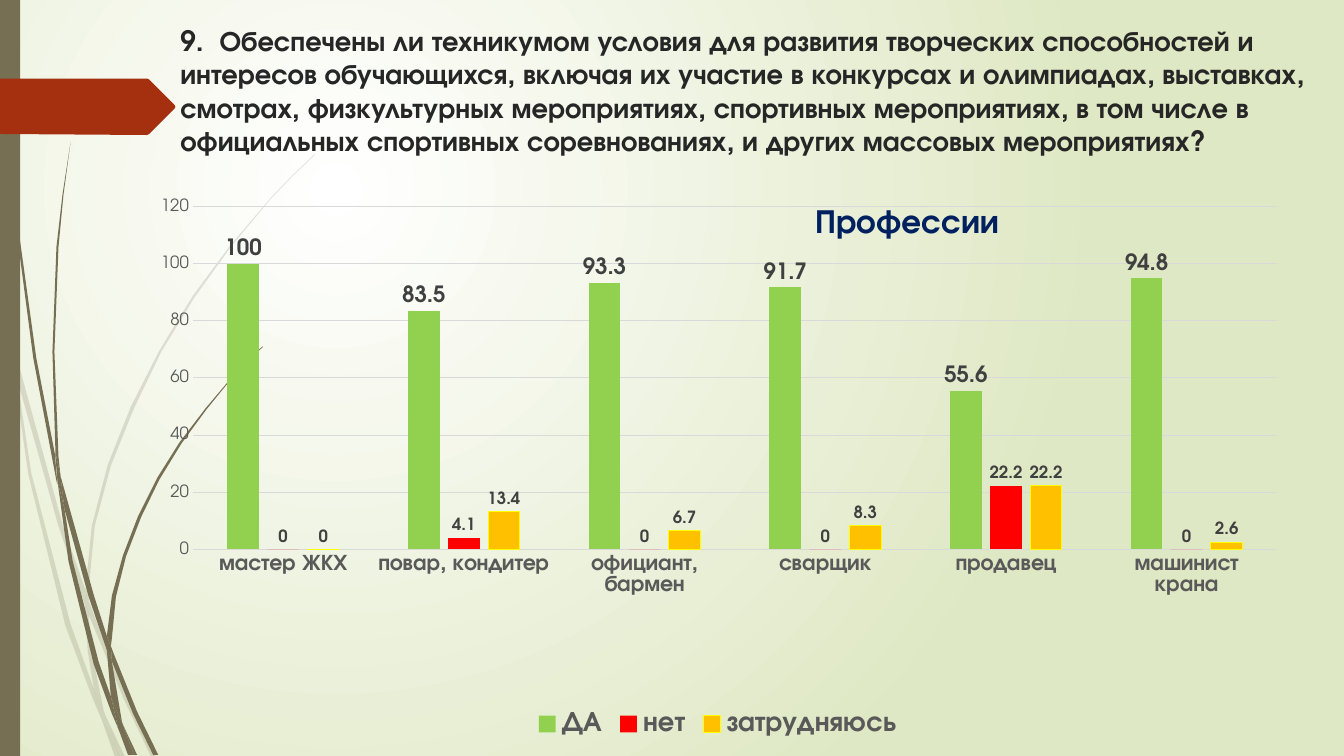
from pptx import Presentation
from pptx.chart.data import CategoryChartData
from pptx.dml.color import RGBColor
from pptx.enum.chart import XL_CHART_TYPE, XL_LABEL_POSITION, XL_LEGEND_POSITION, XL_TICK_MARK
from pptx.enum.shapes import MSO_SHAPE
from pptx.oxml import parse_xml
from pptx.oxml.ns import nsdecls, qn
from pptx.util import Inches, Pt

WHITE = RGBColor(0xFF, 0xFF, 0xFF)
LIME = RGBColor(0xDF, 0xE8, 0xC4)
OLIVE = RGBColor(0x76, 0x6F, 0x54)
RUST = RGBColor(0xA5, 0x30, 0x10)
INK = RGBColor(0x26, 0x26, 0x26)
NAVY = RGBColor(0x00, 0x20, 0x60)
GREY = RGBColor(0x59, 0x59, 0x59)
DARK = RGBColor(0x40, 0x40, 0x40)
RULE = RGBColor(0xD9, 0xD9, 0xD9)
GREEN = RGBColor(0x92, 0xD0, 0x50)
RED = RGBColor(0xFF, 0x00, 0x00)
GOLD = RGBColor(0xFF, 0xC0, 0x00)
YELLOW = RGBColor(0xFF, 0xFF, 0x00)

PALE_BLADES = [
    [(.11, 3.5), (.09, 3.22), (0, 2.82), (0, 2.99), (.1, 3.44)],
    [(.58, 5.22), (.84, 5.99), (.85, 5.86), (.62, 5.2), (.14, 3.45), (.17, 3.76)],
    [(.92, 6.07), (.88, 5.96), (.88, 6.1), (1.23, 6.94), (1.5, 7.51), (1.55, 7.51), (1.27, 6.92)],
    [(1.19, 7.51), (1.24, 7.51), (1.05, 7.11)],
    [(.93, 6.83), (.7, 6.19), (.31, 4.69), (.17, 3.76), (.11, 3.5), (.28, 4.7), (.65, 6.21),
     (.92, 6.93), (1.01, 7.14), (.99, 7.07)],
    [(.84, 5.99), (.87, 6.46), (.93, 6.83), (.96, 6.92), (1.05, 7.11), (1.03, 7.06), (.91, 6.46),
     (.88, 6.1), (.88, 6.08)],
    [(.88, 5.84), (.94, 5.22), (1.1, 4.62), (1.33, 4.05), (1.6, 3.49), (1.93, 2.95), (2.29, 2.45),
     (2.68, 1.98), (2.9, 1.75), (3.12, 1.54), (3.12, 1.53), (2.89, 1.75), (2.68, 1.97),
     (2.28, 2.44), (1.91, 2.94), (1.58, 3.48), (1.3, 4.03), (1.07, 4.61), (.91, 5.22),
     (.85, 5.84), (.85, 5.86), (.88, 5.96)],
    [(1.01, 7.14), (1.14, 7.51), (1.19, 7.51)],
    [(.88, 6.08), (.88, 6.1), (.88, 5.96), (.85, 5.86), (.84, 5.99)],
    [(.96, 6.92), (.93, 6.83), (.99, 7.07), (1.01, 7.14), (1.19, 7.51), (1.05, 7.11)],
]
DARK_BLADES = [
    [(.07, 1.1), (.17, 2.33), (.33, 3.55), (.56, 4.77), (.57, 4.81), (.55, 4.57), (.55, 4.53),
     (.36, 3.55), (.19, 2.32), (.08, 1.09), (.05, .48), (.04, 0), (.03, 0), (.04, .48)],
    [(.88, 5.92), (1.06, 6.45), (1.06, 6.33), (1.06, 6.31), (.93, 5.9), (.6, 4.72), (.64, 5.05)],
    [(1.13, 6.49), (1.1, 6.41), (1.11, 6.56), (1.32, 7.08), (1.52, 7.49), (1.57, 7.49),
     (1.36, 7.06)],
    [(1.1, 6.91), (.98, 6.57), (.72, 5.56), (.64, 5.05), (.57, 4.77), (.68, 5.57), (.93, 6.59),
     (1.11, 7.08), (1.17, 7.22), (1.16, 7.17)],
    [(.6, 4.72), (.58, 4.53), (.54, 3.49), (.58, 2.45), (.63, 1.93), (.7, 1.41), (.62, 1.93),
     (.56, 2.45), (.52, 3.49), (.55, 4.49)],
    [(1.33, 7.49), (1.36, 7.49), (1.22, 7.19)],
    [(.57, 4.77), (.64, 5.05), (.6, 4.72), (.55, 4.49), (.55, 4.53)],
    [(1.11, 6.33), (1.15, 5.92), (1.25, 5.52), (1.4, 5.13), (1.58, 4.76), (1.8, 4.4),
     (2.05, 4.06), (2.31, 3.74), (2.45, 3.59), (2.61, 3.44), (2.6, 3.44), (2.45, 3.58),
     (2.31, 3.73), (2.04, 4.05), (1.78, 4.39), (1.56, 4.74), (1.37, 5.12), (1.22, 5.51),
     (1.11, 5.91), (1.06, 6.31), (1.1, 6.41)],
    [(1.17, 7.22), (1.27, 7.49), (1.31, 7.49)],
    [(1.06, 6.45), (1.1, 6.91), (1.16, 7.06), (1.22, 7.19), (1.21, 7.16), (1.11, 6.56),
     (1.09, 6.51)],
    [(1.06, 6.45), (1.09, 6.51), (1.11, 6.56), (1.1, 6.41), (1.06, 6.31), (1.06, 6.33)],
    [(1.16, 7.06), (1.1, 6.91), (1.16, 7.17), (1.17, 7.22), (1.3, 7.49), (1.33, 7.49),
     (1.22, 7.19)],
]
ARROW = [(0, .78), (1.46, .78), (1.48, .79), (1.73, 1.04), (1.74, 1.06), (1.73, 1.08),
         (1.48, 1.33), (1.46, 1.34), (0, 1.33)]

TITLE = ("9.  Обеспечены ли техникумом условия для развития творческих способностей и интересов "
         "обучающихся, включая их участие в конкурсах и олимпиадах, выставках, смотрах, "
         "физкультурных мероприятиях, спортивных мероприятиях, в том числе в официальных "
         "спортивных соревнованиях, и других массовых мероприятиях?")
JOBS = ["мастер ЖКХ", "повар, кондитер", "официант, бармен", "сварщик", "продавец",
        "машинист крана"]
SERIES = [
    ("ДА", [100, 83.5, 93.3, 91.7, 55.6, 94.8], GREEN, None, 16),
    ("нет", [0, 4.1, 0, 0, 22.2, 0], RED, None, 12),
    ("затрудняюсь", [0, 13.4, 6.7, 8.3, 22.2, 2.6], GOLD, YELLOW, 12),
]


class Deck:
    face = "TeX Gyre Adventor"

    def __init__(self):
        self.show = Presentation()
        self.show.slide_width, self.show.slide_height = Inches(13.33), Inches(7.5)
        self.slide = self.show.slides.add_slide(self.show.slide_layouts[6])

    def style(self, font, size, color, bold=True):
        font.name, font.size, font.bold = self.face, Pt(size), bold
        font.color.rgb = color

    def paint(self, shape, color):
        shape.shadow.inherit = False
        shape.fill.solid()
        shape.fill.fore_color.rgb = color
        shape.line.fill.background()

    def backdrop(self, inner, outer):
        fill = self.slide.background.fill
        fill.gradient()
        for stop, color in zip(fill.gradient_stops, (inner, outer)):
            stop.color.rgb = color
        grad = self.slide.element.find(".//" + qn("a:gradFill"))
        grad.remove(grad.find(qn("a:lin")))
        grad.append(parse_xml(
            f'<a:path {nsdecls("a")} path="circle">'
            '<a:fillToRect l="50000" t="50000" r="100000" b="100000"/></a:path>'))

    def outline(self, points, color, alpha=None):
        spots = [(Inches(x), Inches(y)) for x, y in points]
        pen = self.slide.shapes.build_freeform(*spots[0])
        pen.add_line_segments(spots[1:], close=True)
        shape = pen.convert_to_shape()
        self.paint(shape, color)
        if alpha:
            tint = shape.element.spPr.find(qn("a:solidFill"))[0]
            tint.append(parse_xml(f'<a:alpha {nsdecls("a")} val="{alpha * 1000}"/>'))

    def block(self, x, y, w, h, color):
        box = map(Inches, (x, y, w, h))
        self.paint(self.slide.shapes.add_shape(MSO_SHAPE.RECTANGLE, *box), color)

    def text(self, x, y, w, h, words, size, color):
        frame = self.slide.shapes.add_textbox(*map(Inches, (x, y, w, h))).text_frame
        frame.word_wrap = True
        frame.text = words
        self.style(frame.paragraphs[0].runs[0].font, size, color)

    def place(self, host, index, **spots):
        for old in host.findall(qn("c:layout")):
            host.remove(old)
        parts = "".join(f'<c:{tag} val="{val}"/>' for tag, val in spots.items())
        host.insert(index, parse_xml(
            f'<c:layout {nsdecls("c")}><c:manualLayout>{parts}</c:manualLayout></c:layout>'))

    def chart(self, x, y, w, h, title, cats, series):
        data = CategoryChartData()
        data.categories = cats
        for name, vals, *_ in series:
            data.add_series(name, vals)
        chart = self.slide.shapes.add_chart(
            XL_CHART_TYPE.COLUMN_CLUSTERED, *map(Inches, (x, y, w, h)), data).chart
        chart.font.name, chart.font.size = self.face, Pt(10)
        self.legend(chart)
        self.axes(chart)
        self.bars(chart.plots[0], series)
        frame = chart.chart_title.text_frame
        frame.text = title
        self.style(frame.paragraphs[0].runs[0].font, 24, NAVY)
        head = chart.element.find(".//" + qn("c:title"))
        self.place(head, 1, xMode="edge", yMode="edge", x=.58, y=.02)
        head.find(qn("c:overlay")).set("val", "1")
        area = chart.element.find(".//" + qn("c:plotArea"))
        self.place(area, 0, layoutTarget="inner", xMode="edge", yMode="edge",
                   x=.04, y=.034, w=.95, h=.618)

    def legend(self, chart):
        chart.has_legend = True
        chart.legend.position = XL_LEGEND_POSITION.BOTTOM
        chart.legend.include_in_layout = False
        self.style(chart.legend.font, 20, GREY)

    def axes(self, chart):
        cat, val = chart.category_axis, chart.value_axis
        for axis, size, bold in ((cat, 16, True), (val, 12, False)):
            axis.major_tick_mark = axis.minor_tick_mark = XL_TICK_MARK.NONE
            self.style(axis.tick_labels.font, size, GREY, bold)
        val.minimum_scale, val.maximum_scale, val.major_unit = 0, 120, 20
        val.format.line.fill.background()
        for line in (cat.format.line, val.major_gridlines.format.line):
            line.color.rgb, line.width = RULE, Pt(.75)

    def bars(self, plot, series):
        plot.gap_width, plot.overlap, plot.vary_by_categories = 219, -27, False
        for bar, (_, _, color, edge, size) in zip(plot.series, series):
            bar.format.fill.solid()
            bar.format.fill.fore_color.rgb = color
            if edge:
                bar.format.line.color.rgb, bar.format.line.width = edge, Pt(.75)
            labels = bar.data_labels
            labels.show_value = True
            labels.position = XL_LABEL_POSITION.OUTSIDE_END
            self.style(labels.font, size, DARK)


def main():
    deck = Deck()
    deck.backdrop(WHITE, LIME)
    for blade in PALE_BLADES:
        deck.outline(blade, OLIVE, 20)
    for blade in DARK_BLADES:
        deck.outline(blade, OLIVE)
    deck.block(0, 0, .2, 7.5, OLIVE)
    deck.outline(ARROW, RUST)
    deck.text(1.69, .18, 11.53, 1.4, TITLE, 20, INK)
    deck.chart(1.46, 1.86, 11.32, 5.51, "Профессии", JOBS, SERIES)
    deck.show.save("out.pptx")


if __name__ == "__main__":
    main()
